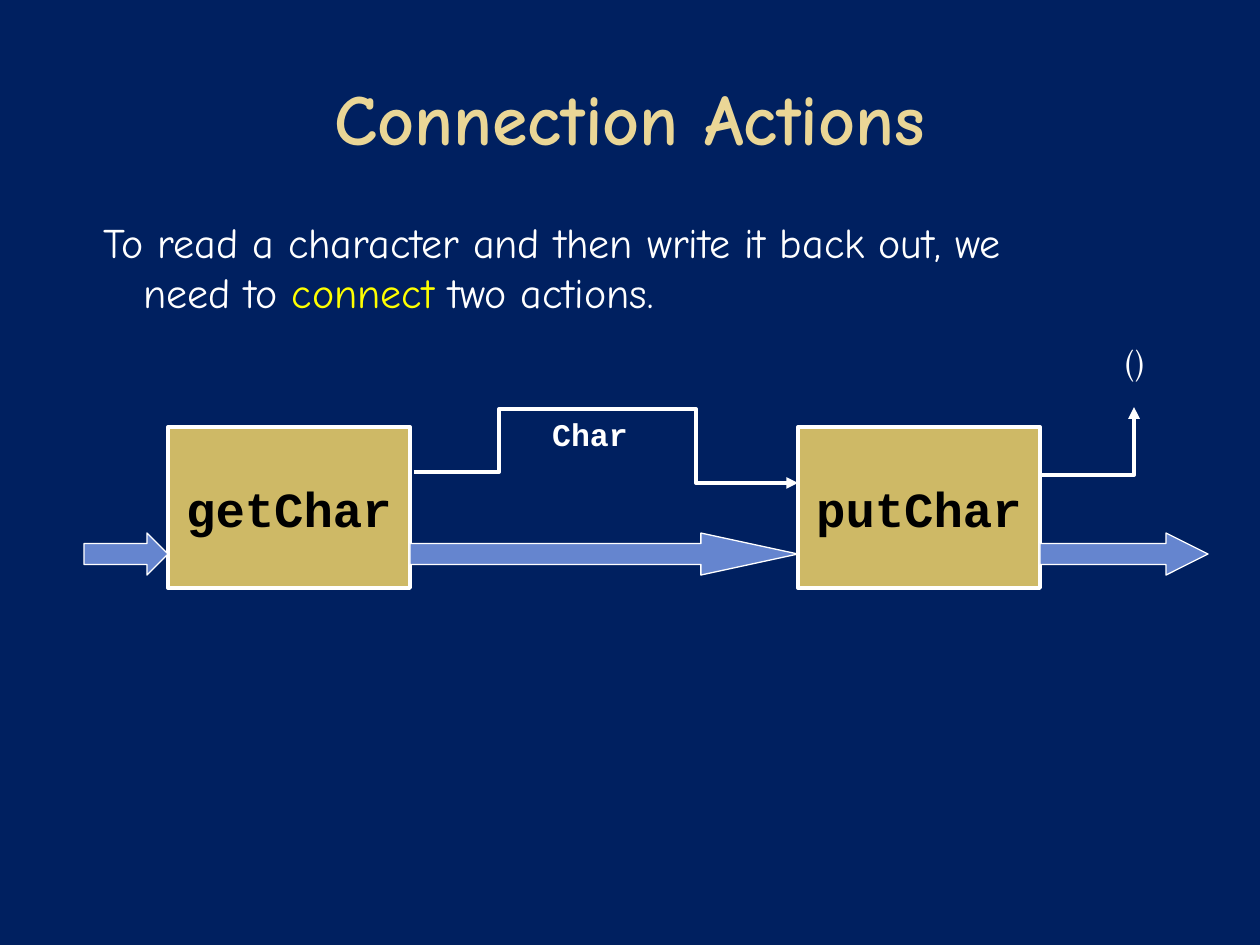
from dataclasses import dataclass
from typing import Any

import lxml.etree
import pptx
import pptx.dml.color
import pptx.enum.shapes
import pptx.enum.text
import pptx.oxml.ns
import pptx.util

EMU_PER_PX = 914400 / 126
ALIGN = pptx.enum.text.PP_ALIGN
ANCHOR = pptx.enum.text.MSO_ANCHOR
SHAPE = pptx.enum.shapes.MSO_SHAPE


@dataclass(frozen=True)
class Theme:
    background: str = "002060"
    title: str = "EAD696"
    text: str = "FFFFFF"
    highlight: str = "FFFF00"
    box: str = "CEB966"
    box_text: str = "000000"
    arrow: str = "6585CF"
    line: str = "FFFFFF"
    prose_font: str = "Comic Neue"
    code_font: str = "Courier New"
    unit_font: str = "Vollkorn"
    title_size: int = 41
    body_size: int = 24
    box_size: int = 28
    label_size: int = 18
    heavy_line: float = 2.25
    thin_line: float = 0.75


THEME = Theme()


@dataclass(frozen=True)
class ActionBox:
    name: str
    left: int
    top: int = 427
    width: int = 242
    height: int = 161


@dataclass(frozen=True)
class FlowArrow:
    left: int
    right: int
    head_ratio: float
    top: int = 533
    height: int = 42


@dataclass(frozen=True)
class ValuePath:
    points: tuple[tuple[int, int], ...]


def px(length: int) -> int:
    return round(length * EMU_PER_PX)


def color(value: str) -> pptx.dml.color.RGBColor:
    return pptx.dml.color.RGBColor.from_string(value)


def write_text(shape: Any, parts: list[tuple[str, str]], *, font: str, size: int,
               bold: bool = False, align: Any = ALIGN.LEFT, anchor: Any = ANCHOR.TOP,
               wrap: bool = False, hanging: int = 0) -> None:
    """Write one paragraph from (text, colour) parts."""
    frame = shape.text_frame
    frame.word_wrap = wrap
    frame.vertical_anchor = anchor
    paragraph = frame.paragraphs[0]
    paragraph.alignment = align
    if hanging:
        properties = paragraph._p.get_or_add_pPr()
        properties.set("marL", str(px(hanging)))
        properties.set("indent", str(-px(hanging)))
    for text, text_color in parts:
        run = paragraph.add_run()
        run.text = text
        run.font.name = font
        run.font.size = pptx.util.Pt(size)
        run.font.bold = bold
        run.font.color.rgb = color(text_color)


def add_text_box(slide: Any, left: int, top: int, width: int, height: int,
                 parts: list[tuple[str, str]], **text_format: Any) -> None:
    shape = slide.shapes.add_textbox(px(left), px(top), px(width), px(height))
    write_text(shape, parts, **text_format)


def add_filled_shape(slide: Any, kind: Any, left: int, top: int, width: int,
                     height: int, fill: str, line_width: float) -> Any:
    shape = slide.shapes.add_shape(kind, px(left), px(top), px(width), px(height))
    shape.shadow.inherit = False
    shape.fill.solid()
    shape.fill.fore_color.rgb = color(fill)
    shape.line.color.rgb = color(THEME.line)
    shape.line.width = pptx.util.Pt(line_width)
    return shape


def draw_action(slide: Any, box: ActionBox) -> None:
    shape = add_filled_shape(slide, SHAPE.RECTANGLE, box.left, box.top, box.width,
                             box.height, THEME.box, THEME.heavy_line)
    write_text(shape, [(box.name, THEME.box_text)], font=THEME.code_font,
               size=THEME.box_size, bold=True, align=ALIGN.CENTER, anchor=ANCHOR.MIDDLE)


def draw_flow(slide: Any, arrow: FlowArrow) -> None:
    shape = add_filled_shape(slide, SHAPE.RIGHT_ARROW, arrow.left, arrow.top,
                             arrow.right - arrow.left, arrow.height,
                             THEME.arrow, THEME.thin_line)
    shape.adjustments[0] = 0.5
    shape.adjustments[1] = arrow.head_ratio


def draw_value_path(slide: Any, path: ValuePath) -> None:
    start, *rest = path.points
    builder = slide.shapes.build_freeform(*start, scale=EMU_PER_PX)
    builder.add_line_segments(rest, close=False)
    shape = builder.convert_to_shape()
    shape.shadow.inherit = False
    shape.fill.background()
    shape.line.color.rgb = color(THEME.line)
    shape.line.width = pptx.util.Pt(THEME.heavy_line)
    line = shape.line._get_or_add_ln()
    lxml.etree.SubElement(line, pptx.oxml.ns.qn("a:tailEnd"), type="triangle")


def main() -> None:
    presentation = pptx.Presentation()
    presentation.slide_width = px(1260)
    presentation.slide_height = px(945)
    slide = presentation.slides.add_slide(presentation.slide_layouts[6])
    slide.background.fill.solid()
    slide.background.fill.fore_color.rgb = color(THEME.background)

    # Title and explanation
    add_text_box(slide, 63, 38, 1134, 157, [("Connection Actions", THEME.title)],
                 font=THEME.prose_font, size=THEME.title_size, bold=True,
                 align=ALIGN.CENTER, anchor=ANCHOR.MIDDLE, wrap=True)
    add_text_box(slide, 91, 210, 1018, 115,
                 [("To read a character and then write it back out, we need to ", THEME.text),
                  ("connect ", THEME.highlight),
                  ("two actions.", THEME.text)],
                 font=THEME.prose_font, size=THEME.body_size, wrap=True, hanging=40)

    # Actions
    get_char = ActionBox("getChar", 168)
    put_char = ActionBox("putChar", 798)
    for box in (get_char, put_char):
        draw_action(slide, box)
    get_right = get_char.left + get_char.width
    put_right = put_char.left + put_char.width

    # Flow into, between and out of the actions
    for arrow in (FlowArrow(84, get_char.left, 0.5),
                  FlowArrow(get_right, put_char.left, 2.31),
                  FlowArrow(put_right, 1208, 1)):
        draw_flow(slide, arrow)

    # Values passed on by the actions
    for path in (ValuePath(((414, 472), (499, 472), (499, 409), (696, 409),
                            (696, 483), (put_char.left, 483))),
                 ValuePath(((put_right, 475), (1134, 475), (1134, 407)))):
        draw_value_path(slide, path)
    add_text_box(slide, 539, 409, 102, 50, [("Char", THEME.text)],
                 font=THEME.code_font, size=THEME.label_size, bold=True,
                 align=ALIGN.CENTER)
    add_text_box(slide, 1113, 336, 58, 63, [("()", THEME.text)],
                 font=THEME.unit_font, size=THEME.label_size)

    presentation.save("out.pptx")


if __name__ == "__main__":
    main()
